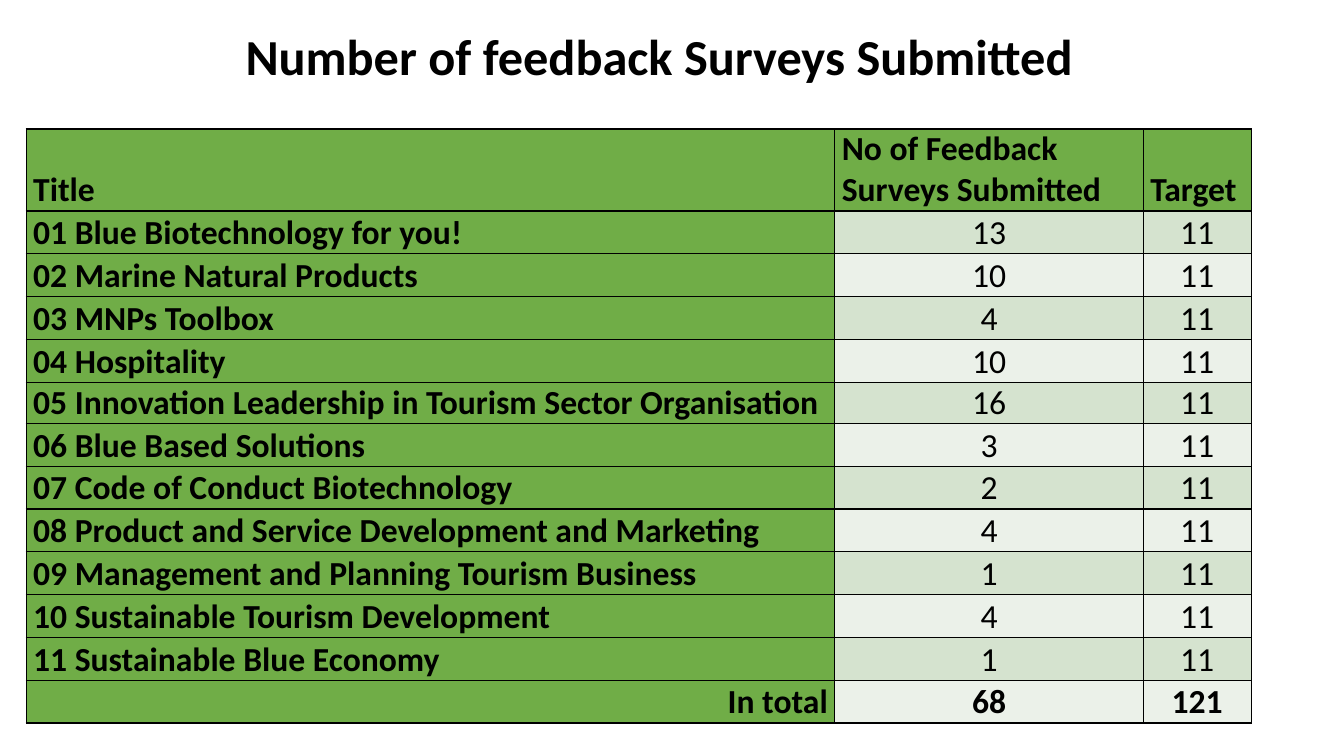
from dataclasses import dataclass

from lxml import etree
from pptx import Presentation
from pptx.dml.color import RGBColor
from pptx.enum.text import MSO_ANCHOR, PP_ALIGN
from pptx.oxml.ns import qn
from pptx.util import Inches, Pt

LEFT, CENTER, RIGHT = PP_ALIGN.LEFT, PP_ALIGN.CENTER, PP_ALIGN.RIGHT
MIDDLE, BOTTOM = MSO_ANCHOR.MIDDLE, MSO_ANCHOR.BOTTOM


@dataclass(frozen=True)
class Theme:
    """Colours, font and type sizes of the deck."""
    font: str = "Calibri"
    title_size: int = 36
    table_size: int = 24
    ink: str = "000000"
    green: str = "70AD47"
    bands: tuple = ("D5E3CF", "EBF1E9")
    border_width: int = 1


THEME = Theme()
SLIDE_SIZE = (13.33, 7.5)
TITLE_BOX = (0.79, 0.26, 11.5, 0.66)
TABLE_BOX = (0.26, 1.28, 12.15, 5.89)
COLUMN_WIDTHS = (8.02, 3.06, 1.07)
HEADER_HEIGHT = 0.81
TIGHT_ROW, TIGHT_HEIGHT = 5, 0.41
CELL_INSET = 0.07
TARGET = 11

HEADINGS = ("Title", "No of Feedback Surveys Submitted", "Target")
SURVEYS = (
    ("01 Blue Biotechnology for you!", 13),
    ("02 Marine Natural Products", 10),
    ("03 MNPs Toolbox", 4),
    ("04 Hospitality", 10),
    ("05 Innovation Leadership in Tourism Sector Organisation", 16),
    ("06 Blue Based Solutions", 3),
    ("07 Code of Conduct Biotechnology", 2),
    ("08 Product and Service Development and Marketing", 4),
    ("09 Management and Planning Tourism Business", 1),
    ("10 Sustainable Tourism Development", 4),
    ("11 Sustainable Blue Economy", 1),
)


def write_text(frame, text, size, bold, alignment):
    """Fill a text frame with one formatted run."""
    para = frame.paragraphs[0]
    para.alignment = alignment
    span = para.add_run()
    span.text = text
    span.font.name = THEME.font
    span.font.size = Pt(size)
    span.font.bold = bold
    span.font.color.rgb = RGBColor.from_string(THEME.ink)
    return para


def draw_borders(cell):
    """Give a cell a thin solid line on all four sides."""
    properties = cell._tc.get_or_add_tcPr()
    for side in ("a:lnL", "a:lnR", "a:lnT", "a:lnB"):
        line = etree.SubElement(properties, qn(side), w=str(Pt(THEME.border_width)))
        fill = etree.SubElement(line, qn("a:solidFill"))
        etree.SubElement(fill, qn("a:srgbClr"), val=THEME.ink)


def fill_cell(cell, text, color, bold, alignment):
    """Write and style one table cell."""
    cell.margin_left = cell.margin_right = Inches(CELL_INSET)
    cell.margin_top = cell.margin_bottom = 0
    cell.vertical_anchor = BOTTOM
    draw_borders(cell)
    cell.fill.solid()
    cell.fill.fore_color.rgb = RGBColor.from_string(color)
    write_text(cell.text_frame, text, THEME.table_size, bold, alignment)


def add_title(page, box, text):
    """Place the slide title in its box."""
    title = page.shapes.title
    title.left, title.top, title.width, title.height = map(Inches, box)
    title.text_frame.vertical_anchor = MIDDLE
    para = write_text(title.text_frame, text, THEME.title_size, True, CENTER)
    para.line_spacing = 0.9


def add_survey_table(page, box):
    """Build the survey table with its heading and total rows."""
    total = sum(count for _, count in SURVEYS)
    rows = [HEADINGS, *((name, count, TARGET) for name, count in SURVEYS),
            ("In total", total, TARGET * len(SURVEYS))]
    last = len(rows) - 1
    table = page.shapes.add_table(len(rows), len(HEADINGS), *map(Inches, box)).table
    for column, width in zip(table.columns, COLUMN_WIDTHS):
        column.width = Inches(width)
    row_height = (box[3] - HEADER_HEIGHT - TIGHT_HEIGHT) / (last - 1)
    special_heights = {0: HEADER_HEIGHT, TIGHT_ROW: TIGHT_HEIGHT}
    for index, values in enumerate(rows):
        table.rows[index].height = Inches(special_heights.get(index, row_height))
        for position, value in enumerate(values):
            labelled = index == 0 or position == 0
            color = THEME.green if labelled else THEME.bands[(index - 1) % 2]
            alignment = LEFT if labelled else CENTER
            if index == last and position == 0:
                alignment = RIGHT
            fill_cell(table.cell(index, position), str(value), color,
                      labelled or index == last, alignment)


def main():
    """Create the deck and save it."""
    deck = Presentation()
    deck.slide_width, deck.slide_height = map(Inches, SLIDE_SIZE)
    page = deck.slides.add_slide(deck.slide_layouts[5])
    add_title(page, TITLE_BOX, "Number of feedback Surveys Submitted")
    add_survey_table(page, TABLE_BOX)
    deck.save("out.pptx")


if __name__ == "__main__":
    main()
